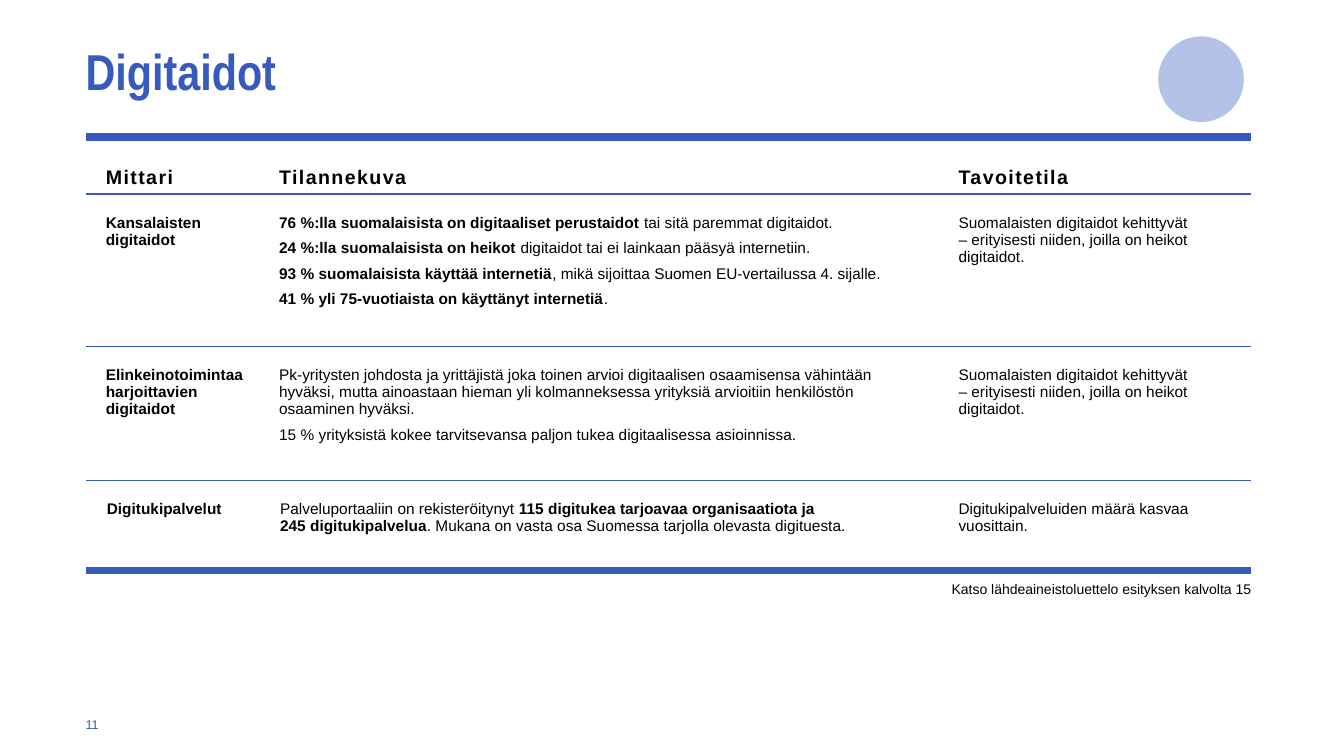
from dataclasses import dataclass
from lxml.etree import SubElement
from pptx import Presentation
from pptx.dml.color import RGBColor
from pptx.enum.shapes import MSO_SHAPE
from pptx.enum.text import MSO_ANCHOR, PP_ALIGN
from pptx.oxml import parse_xml
from pptx.oxml.ns import nsdecls, qn
from pptx.util import Pt


@dataclass(frozen=True)
class Theme:
    blue: str = "365ABD"
    pale: str = "ACBCE7"
    black: str = "000000"
    body_font: str = "Arial"
    title_font: str = "Arial Narrow"
    title: int = 36
    heading: int = 14
    body: int = 11
    note: int = 10
    number: int = 9
    thick: int = 6
    thin: int = 1


THEME = Theme()
TITLE = "Digitaidot"
SOURCE_NOTE = "Katso lähdeaineistoluettelo esityksen kalvolta 15"
PAGE_NUMBER = "11"
CITIZEN_GOAL = "Suomalaisten digitaidot kehittyvät \n– erityisesti niiden, joilla on heikot digitaidot."

HEADINGS = ["Mittari", "Tilannekuva", "Tavoitetila"]
MEASURES = [
    (
        "Kansalaisten digitaidot",
        [
            [("76 %:lla suomalaisista on digitaaliset perustaidot ", True), ("tai sitä paremmat digitaidot.", False)],
            [("24 %:lla suomalaisista on heikot ", True), ("digitaidot tai ei lainkaan pääsyä internetiin.", False)],
            [("93 % suomalaisista käyttää internetiä", True),
             (", mikä sijoittaa Suomen EU-vertailussa 4. sijalle.", False)],
            [("41 % yli 75-vuotiaista on käyttänyt internetiä", True), (".", False)],
        ],
        CITIZEN_GOAL,
    ),
    (
        "Elinkeinotoimintaa harjoittavien digitaidot",
        [
            [("Pk-yritysten johdosta ja yrittäjistä joka toinen arvioi digitaalisen osaamisensa vähintään hyväksi, "
              "mutta ainoastaan hieman yli kolmanneksessa yrityksiä arvioitiin henkilöstön osaaminen hyväksi.", False)],
            [("15 % yrityksistä kokee tarvitsevansa paljon tukea digitaalisessa asioinnissa.", False)],
        ],
        CITIZEN_GOAL,
    ),
    (
        "Digitukipalvelut",
        [
            [("Palveluportaaliin on rekisteröitynyt ", False),
             ("115 digitukea tarjoavaa organisaatiota ja \n245 digitukipalvelua", True),
             (". Mukana on vasta osa Suomessa tarjolla olevasta digituesta.", False)],
        ],
        "Digitukipalveluiden määrä kasvaa vuosittain.",
    ),
]

LEFT, WIDTH, TABLE_TOP = 61.2, 832.3, 97.9
COLUMN_WIDTHS = [123.8, 482.4, 226.1]
ROW_HEIGHTS = [40.7, 108.7, 95.8, 64.4]
CELL_INSETS = [14.4, 14.4, 17.3]
LAST_ROW_INSETS = [15.1, 15.1, 17.3]


def style(font, size, color=THEME.black, name=THEME.body_font):
    font.size, font.name = Pt(size), name
    font.color.rgb = RGBColor.from_string(color)


def write(paragraph, pieces, size):
    for text, bold in pieces:
        for index, line in enumerate(text.split("\n")):
            if index:
                paragraph.add_line_break()
            run = paragraph.add_run()
            run.text = line
            run.font.bold = bold
    style(paragraph.font, size)


def rule_cell(cell, above, below):
    cell.fill.background()
    properties = cell._tc.get_or_add_tcPr()
    for index, (side, weight) in enumerate([("L", 0), ("R", 0), ("T", above), ("B", below)]):
        line = parse_xml(f'<a:ln{side} {nsdecls("a")} w="{Pt(weight)}"/>')
        if weight:
            SubElement(SubElement(line, qn("a:solidFill")), qn("a:srgbClr"), val=THEME.blue)
        else:
            SubElement(line, qn("a:noFill"))
        properties.insert(index, line)


def fill_cell(cell, paragraphs, size, space_after=0):
    frame = cell.text_frame
    for index, pieces in enumerate(paragraphs):
        paragraph = frame.add_paragraph() if index else frame.paragraphs[0]
        write(paragraph, pieces, size)
        paragraph.space_after = Pt(space_after)


def add_measures(slide):
    table = slide.shapes.add_table(
        len(MEASURES) + 1, len(HEADINGS), Pt(LEFT), Pt(TABLE_TOP), Pt(WIDTH), Pt(sum(ROW_HEIGHTS))
    ).table
    table.first_row = table.horz_banding = False
    for column, width in zip(table.columns, COLUMN_WIDTHS):
        column.width = Pt(width)
    last = len(MEASURES)
    for row, height in enumerate(ROW_HEIGHTS):
        table.rows[row].height = Pt(height)
        insets = LAST_ROW_INSETS if row == last else CELL_INSETS
        for column, inset in enumerate(insets):
            cell = table.cell(row, column)
            cell.margin_left, cell.margin_right = Pt(inset), Pt(7.2)
            cell.margin_top, cell.margin_bottom = Pt(14.4 if row else 3.6), Pt(3.6)
            rule_cell(cell, THEME.thin if row else THEME.thick, THEME.thick if row == last else THEME.thin)

    for column, heading in enumerate(HEADINGS):
        cell = table.cell(0, column)
        cell.vertical_anchor = MSO_ANCHOR.BOTTOM
        fill_cell(cell, [[(heading, True)]], THEME.heading)
        cell.text_frame.paragraphs[0].runs[0]._r.get_or_add_rPr().set("spc", "100")
    for row, (measure, situation, goal) in enumerate(MEASURES, 1):
        fill_cell(table.cell(row, 0), [[(measure, True)]], THEME.body)
        fill_cell(table.cell(row, 1), situation, THEME.body, 6)
        fill_cell(table.cell(row, 2), [[(goal, False)]], THEME.body, 6)


def place_text(frame, text, size, color, name=THEME.body_font, bold=False, align=PP_ALIGN.LEFT):
    frame.margin_left = frame.margin_right = frame.margin_top = frame.margin_bottom = 0
    frame.vertical_anchor = MSO_ANCHOR.MIDDLE
    frame.word_wrap = True
    paragraph = frame.paragraphs[0]
    paragraph.text = text
    paragraph.alignment = align
    style(paragraph.font, size, color, name)
    paragraph.font.bold = bold
    return paragraph


def add_title(slide):
    title = slide.shapes.title
    title.left, title.top, title.width, title.height = Pt(LEFT), Pt(21), Pt(WIDTH), Pt(63)
    paragraph = place_text(title.text_frame, TITLE, THEME.title, THEME.blue, THEME.title_font, True)
    paragraph.line_spacing = 0.95


def add_circle(slide):
    circle = slide.shapes.add_shape(MSO_SHAPE.OVAL, Pt(827.3), Pt(26), Pt(61.2), Pt(61.2))
    circle.shadow.inherit = False
    circle.fill.solid()
    circle.fill.fore_color.rgb = RGBColor.from_string(THEME.pale)
    SubElement(circle.fill._xPr.find(qn("a:solidFill"))[0], qn("a:alpha"), val="90000")
    circle.line.fill.background()


def main():
    deck = Presentation()
    deck.slide_width, deck.slide_height = Pt(960), Pt(540)
    slide = deck.slides.add_slide(deck.slide_layouts[5])
    add_title(slide)
    add_measures(slide)
    add_circle(slide)
    source_note = slide.shapes.add_textbox(Pt(LEFT + WIDTH - 222.5), Pt(410.4), Pt(222.5), Pt(21))
    place_text(source_note.text_frame, SOURCE_NOTE, THEME.note, THEME.black, align=PP_ALIGN.RIGHT)
    page_number = slide.shapes.add_textbox(Pt(LEFT), Pt(508.3), Pt(28.8), Pt(18))
    place_text(page_number.text_frame, PAGE_NUMBER, THEME.number, THEME.blue)
    deck.save("out.pptx")


if __name__ == "__main__":
    main()
